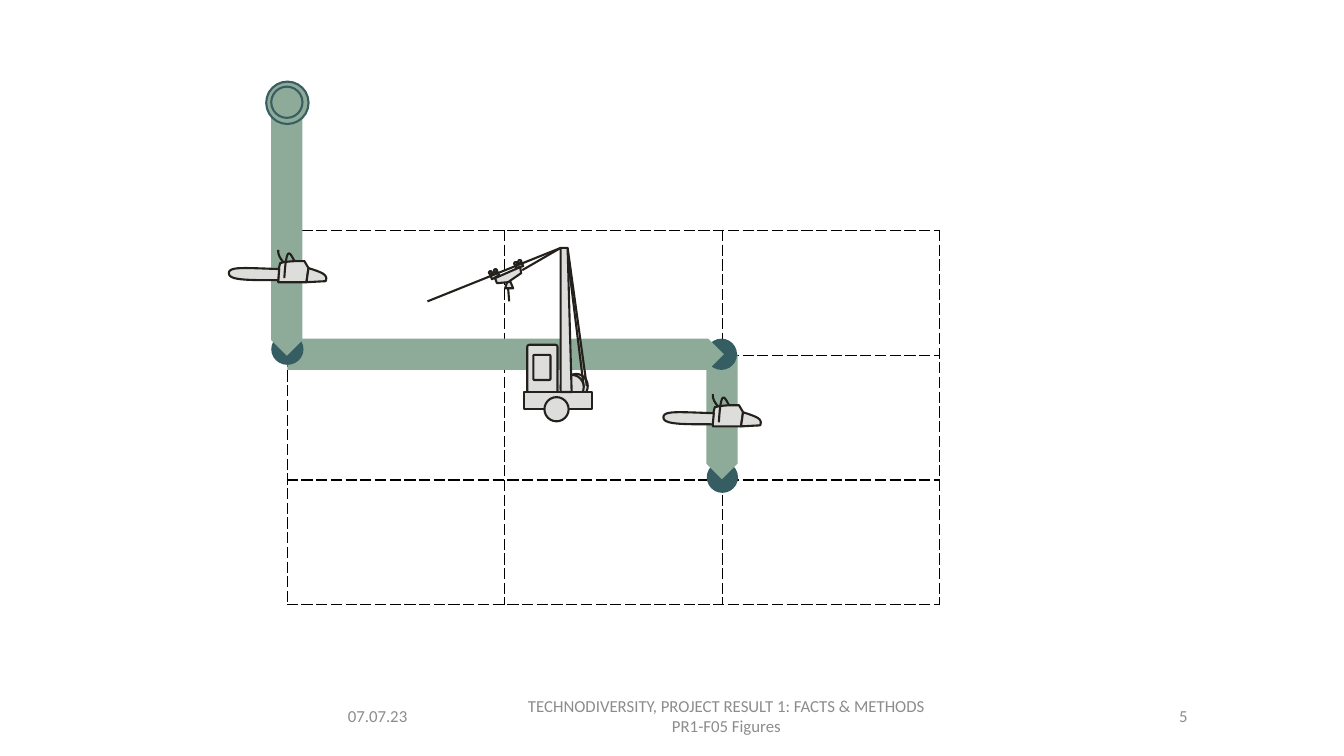
"""Build the slide with a harvesting grid, its work path and the machines on it."""
from copy import deepcopy

from lxml import etree
from pptx import Presentation
from pptx import util as u
from pptx.dml.color import RGBColor
from pptx.enum import shapes, text
from pptx.oxml import ns

PX = 9144
COLORS = {"text": "8C8C8C", "grid": "000000", "stop": "355D62", "path": "8EAB99",
          "ring": "395D61", "machine": "DDDDDC", "ink": "24211D"}
KIND = shapes.MSO_SHAPE
ALIGN = text.PP_ALIGN

SAW_PARTS = [
    (True, [(49, 36), (77, 36), (79, 22), (75, 15), (66, 15, 58, 15, 51, 17),
            (49, 23, 49, 29, 49, 36)]),
    (True, [(77, 36), (96, 35), (99, 28, 91, 26, 79, 22)]),
    (False, [(65, 15), (60, 5, 57, 0, 55, 32)]),
    (False, [(54, 16), (49, 10, 49, 7, 49, 4)]),
    (True, [(49, 34), (16, 34, 0, 34, 0, 27), (0, 20, 17, 22, 50, 23)]),
]


def px(n):
    return u.Emu(round(n * PX))


def rgb(name):
    return RGBColor.from_string(COLORS[name])


def paint(sp, fill=None, line=None):
    sp.shadow.inherit = False
    if fill:
        sp.fill.solid()
        sp.fill.fore_color.rgb = rgb(fill)
    else:
        sp.fill.background()
    if line:
        sp.line.color.rgb = rgb(line)
        sp.line.width = u.Pt(1.5)
    else:
        sp.line.fill.background()


def add_preset(parent, kind, box, fill, line=None, rotation=0):
    sp = parent.shapes.add_shape(kind, *map(px, box))
    sp.rotation = rotation
    paint(sp, fill, line)
    return sp


def add_part(group, kind, *box):
    return add_preset(group, kind, box, "machine", "ink")


def flatten(steps, steps_per_curve=12):
    points = [steps[0]]
    for step in steps[1:]:
        if len(step) == 2:
            points.append(step)
            continue
        x0, y0 = points[-1]
        x1, y1, x2, y2, x3, y3 = step
        for i in range(1, steps_per_curve + 1):
            t = i / steps_per_curve
            a, b, c, d = (1 - t) ** 3, 3 * t * (1 - t) ** 2, 3 * t * t * (1 - t), t ** 3
            points.append((a * x0 + b * x1 + c * x2 + d * x3,
                           a * y0 + b * y1 + c * y2 + d * y3))
    return points


def add_outline(group, steps, closed=True, dx=0, dy=0):
    points = [(px(x + dx), px(y + dy)) for x, y in flatten(steps)]
    builder = group.shapes.build_freeform(*points[0])
    builder.add_line_segments(points[1:], close=closed)
    paint(builder.convert_to_shape(), "machine" if closed else None, "ink")


def add_rope(group, *ends):
    line = group.shapes.add_connector(shapes.MSO_CONNECTOR.STRAIGHT, *map(px, ends))
    line.line.color.rgb = rgb("ink")
    line.line.width = u.Pt(1.5)
    etree.SubElement(line._element.spPr, ns.qn("a:effectLst"))


def set_borders(cell, visible):
    tcPr = cell._tc.get_or_add_tcPr()
    for side in "LRTB":
        ln = etree.SubElement(tcPr, ns.qn("a:ln" + side), w=str(u.Pt(1)))
        if side in visible:
            fill = etree.SubElement(ln, ns.qn("a:solidFill"))
            etree.SubElement(fill, ns.qn("a:srgbClr"), val=COLORS["grid"])
            etree.SubElement(ln, ns.qn("a:prstDash"), val="dash")
        else:
            etree.SubElement(ln, ns.qn("a:noFill"))
    cell.fill.background()


def add_grid(s):
    table = s.shapes.add_table(4, 3, *map(px, (285, 105, 647, 495))).table
    table.first_row = table.horz_banding = False
    for r, row in enumerate(table.rows):
        for c, cell in enumerate(row.cells):
            top_row = "LB" if c == 0 else "B"
            set_borders(cell, "LRTB" if r else top_row)


def add_footer(s):
    content = {
        shapes.PP_PLACEHOLDER.DATE: ("07.07.23", 335, 134, ALIGN.LEFT),
        shapes.PP_PLACEHOLDER.FOOTER: (
            "TECHNODIVERSITY, PROJECT RESULT 1: FACTS & METHODS\nPR1-F05 Figures",
            486, 469, ALIGN.CENTER),
        shapes.PP_PLACEHOLDER.SLIDE_NUMBER: ("5", 977, 211, ALIGN.RIGHT),
    }
    for ph in s.slide_layout.placeholders:
        s.shapes._spTree.append(deepcopy(ph._element))
    for sp in s.placeholders:
        words, left, width, align = content[sp.placeholder_format.type]
        sp.left, sp.top, sp.width, sp.height = map(px, (left, 690, width, 40))
        tf = sp.text_frame
        tf.text = words
        tf.word_wrap = True
        tf.vertical_anchor = text.MSO_ANCHOR.MIDDLE
        for p in tf.paragraphs:
            p.alignment = align
            for r in p.runs:
                r.font.name, r.font.size = "Calibri", u.Pt(12)
                r.font.color.rgb = rgb("text")


def add_work_path(s):
    for stop, leg, rotation in (
            ((701, 458, 31, 31), (654, 398, 124, 31), 90),
            ((700, 336, 31, 31), (285, 336, 433, 31), 0),
            ((269, 331, 32, 31), (162, 215, 245, 31), 90)):
        add_preset(s, KIND.OVAL, stop, "stop")
        add_preset(s, KIND.PENTAGON, leg, "path", rotation=rotation)
    start = s.shapes.add_group_shape()
    for box in ((264, 81, 42, 42), (269, 86, 31, 31)):
        add_preset(start, KIND.OVAL, box, "path", "ring")


def add_chainsaw(s, left, top):
    saw = s.shapes.add_group_shape()
    for closed, steps in SAW_PARTS:
        add_outline(saw, steps, closed, left, top)


def add_yarder(s):
    yarder = s.shapes.add_group_shape()
    cabin = add_part(yarder, KIND.ROUNDED_RECTANGLE, 523, 342, 30, 48)
    cabin.adjustments[0] = 0.07
    add_part(yarder, KIND.OVAL, 560, 371, 23, 24)
    add_rope(yarder, 562, 246, 579, 384)
    add_part(yarder, KIND.OVAL, 556, 372, 23, 24)
    add_part(yarder, KIND.RECTANGLE, 520, 389, 67, 17)
    add_outline(yarder, [(556, 389), (556, 246), (563, 246), (567, 389)])
    add_part(yarder, KIND.OVAL, 540, 394, 24, 24)
    add_rope(yarder, 563, 246, 582, 383)
    window = add_part(yarder, KIND.ROUNDED_RECTANGLE, 529, 352, 17, 25)
    window.adjustments[0] = 0.07
    add_outline(yarder, [(503, 280), (501, 286), (509, 286), (506, 279)])
    add_rope(yarder, 518, 268, 556, 246)
    add_outline(yarder, [(511, 262), (517, 260), (519, 264), (512, 266)])
    add_outline(yarder, [(486, 272), (493, 269), (495, 273), (488, 277)])
    add_rope(yarder, 424, 299, 556, 246)
    add_outline(yarder, [(491, 276), (516, 265), (517, 271), (504, 280), (493, 281)])
    for left, top in ((510, 260), (485, 269), (514, 258), (490, 267)):
        add_part(yarder, KIND.OVAL, left, top, 3, 3)
    add_rope(yarder, 504, 286, 505, 299)


def main():
    prs = Presentation()
    prs.slide_width, prs.slide_height = px(1333), px(750)
    s = prs.slides.add_slide(prs.slide_layouts[6])
    add_footer(s)
    add_grid(s)
    add_work_path(s)
    add_chainsaw(s, 227, 244)
    add_chainsaw(s, 658, 387)
    add_yarder(s)
    prs.save("out.pptx")


if __name__ == "__main__":
    main()
